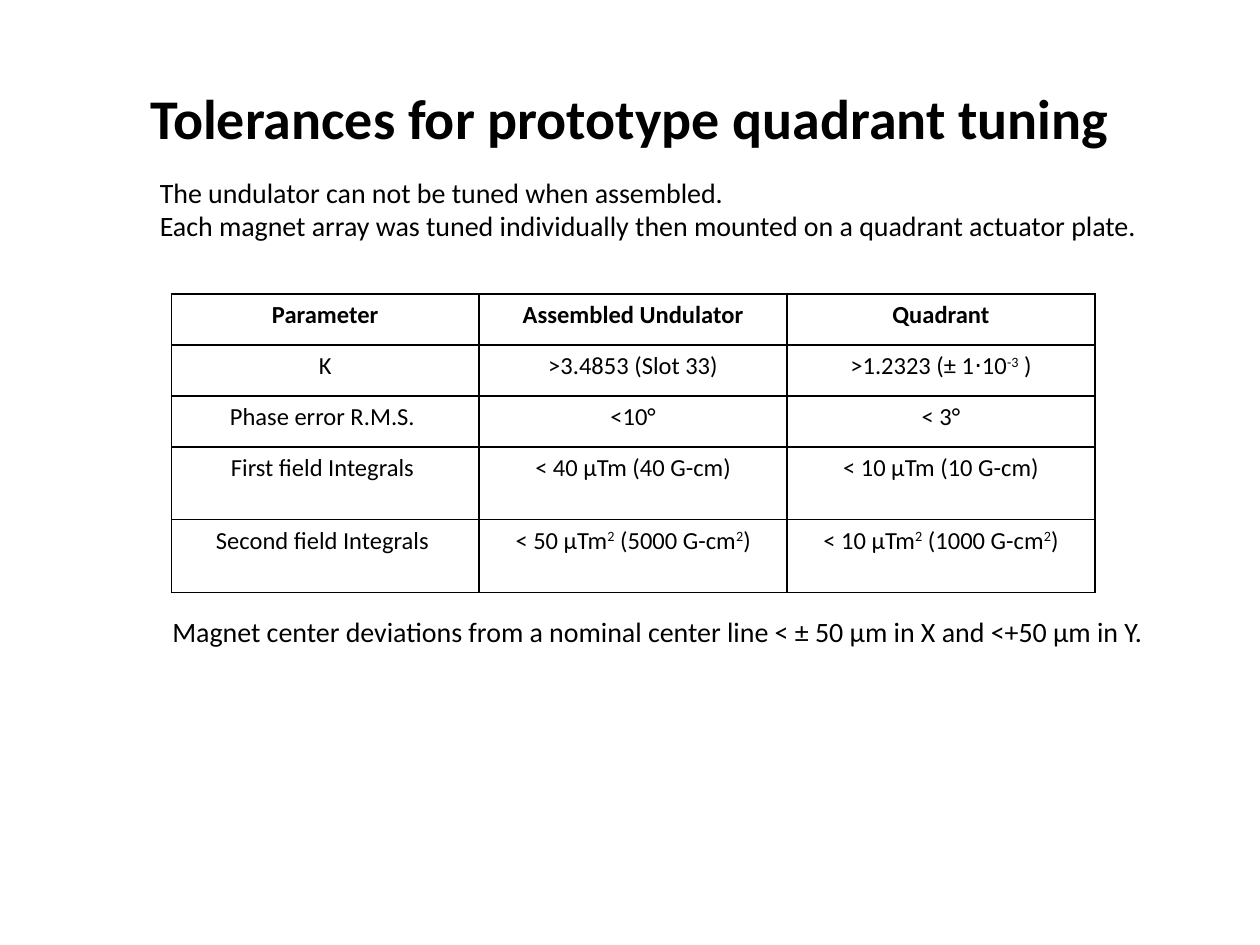
"""Build the slide of tolerances for prototype quadrant tuning."""
import dataclasses

import pptx
import pptx.dml.color
import pptx.enum.text
import pptx.oxml
import pptx.oxml.ns
import pptx.util

WIDTH, HEIGHT = pptx.util.Inches(10), pptx.util.Inches(7.5)
ALIGN = pptx.enum.text.PP_ALIGN


@dataclasses.dataclass(frozen=True)
class Theme:
    """Hold the colour, font, type sizes and border width of the slide."""
    ink: str = "000000"
    font: str = "Calibri"
    title: int = 32
    body: int = 16
    cell: int = 14
    border: int = 1


THEME = Theme()
TITLE = "Tolerances for prototype quadrant tuning"
INTRO = [
    "The undulator can not be tuned when assembled.",
    "Each magnet array was tuned individually then mounted on a quadrant actuator plate.",
]
FOOTNOTE = "Magnet center deviations from a nominal center line < ± 50 μm in X and <+50 μm in Y."
ROWS = [
    ("Parameter", "Assembled Undulator", "Quadrant"),
    ("K", ">3.4853 (Slot 33)", ">1.2323 (± 1⋅10^-3^ )"),
    ("Phase error R.M.S. ", "<10°", "< 3°"),
    ("First field Integrals ", "< 40 μTm (40 G-cm)", "< 10 μTm (10 G-cm)"),
    ("Second field Integrals ", "< 50 μTm^2^ (5000 G-cm^2^)", "< 10 μTm^2^ (1000 G-cm^2^)"),
]
ROW_HEIGHTS = [0.054] * 3 + [0.077] * 2


def box(x, y, w, h):
    """Turn shares of the slide's size into lengths."""
    return int(x * WIDTH), int(y * HEIGHT), int(w * WIDTH), int(h * HEIGHT)


def format_run(r, size, bold=False):
    """Give a run the theme's font and colour."""
    r.font.name, r.font.size, r.font.bold = THEME.font, pptx.util.Pt(size), bold
    r.font.color.rgb = pptx.dml.color.RGBColor.from_string(THEME.ink)


def write_marked(p, text, size, bold=False):
    """Write text in which carets enclose superscripts."""
    for i, part in enumerate(text.split("^")):
        r = p.add_run()
        r.text = part
        format_run(r, size, bold)
        if i % 2:
            r._r.get_or_add_rPr().set("baseline", "30000")


def add_title(s, text, area):
    """Place and format the title placeholder."""
    sp = s.shapes.title
    sp.left, sp.top, sp.width, sp.height = area
    tf = sp.text_frame
    tf.text = text
    tf.vertical_anchor = pptx.enum.text.MSO_ANCHOR.MIDDLE
    p = tf.paragraphs[0]
    p.alignment = ALIGN.CENTER
    format_run(p.runs[0], THEME.title, bold=True)


def add_text(s, lines, area):
    """Add a text box with one paragraph for each line."""
    tf = s.shapes.add_textbox(*area).text_frame
    tf.word_wrap = True
    tf.text = "\n".join(lines)
    for p in tf.paragraphs:
        format_run(p.runs[0], THEME.body)


def add_borders(cell):
    """Draw a solid line on each side of a cell."""
    tcPr = cell._tc.get_or_add_tcPr()
    for i, side in enumerate(("lnL", "lnR", "lnT", "lnB")):
        tcPr.insert(i, pptx.oxml.parse_xml(
            f'<a:{side} {pptx.oxml.ns.nsdecls("a")} w="{pptx.util.Pt(THEME.border)}">'
            f'<a:solidFill><a:srgbClr val="{THEME.ink}"/></a:solidFill></a:{side}>'))


def add_tolerances(s, rows, heights, area):
    """Add the bordered table with a bold header row."""
    table = s.shapes.add_table(len(rows), len(rows[0]), *area).table
    table.first_row = table.horz_banding = False
    for i, (row, height) in enumerate(zip(rows, heights)):
        table.rows[i].height = int(height * HEIGHT)
        for j, text in enumerate(row):
            cell = table.cell(i, j)
            cell.fill.background()
            add_borders(cell)
            p = cell.text_frame.paragraphs[0]
            p.alignment = ALIGN.CENTER
            write_marked(p, text, THEME.cell, bold=i == 0)


def main():
    """Build and save the slide."""
    prs = pptx.Presentation()
    prs.slide_width, prs.slide_height = WIDTH, HEIGHT
    s = prs.slides.add_slide(prs.slide_layouts[5])
    add_title(s, TITLE, box(0.05, 0.04, 0.9, 0.167))
    add_text(s, [FOOTNOTE], box(0.127, 0.644, 0.806, 0.056))
    add_tolerances(s, ROWS, ROW_HEIGHTS, box(0.136, 0.311, 0.733, sum(ROW_HEIGHTS)))
    add_text(s, INTRO, box(0.117, 0.179, 0.804, 0.085))
    prs.save("out.pptx")


if __name__ == "__main__":
    main()
